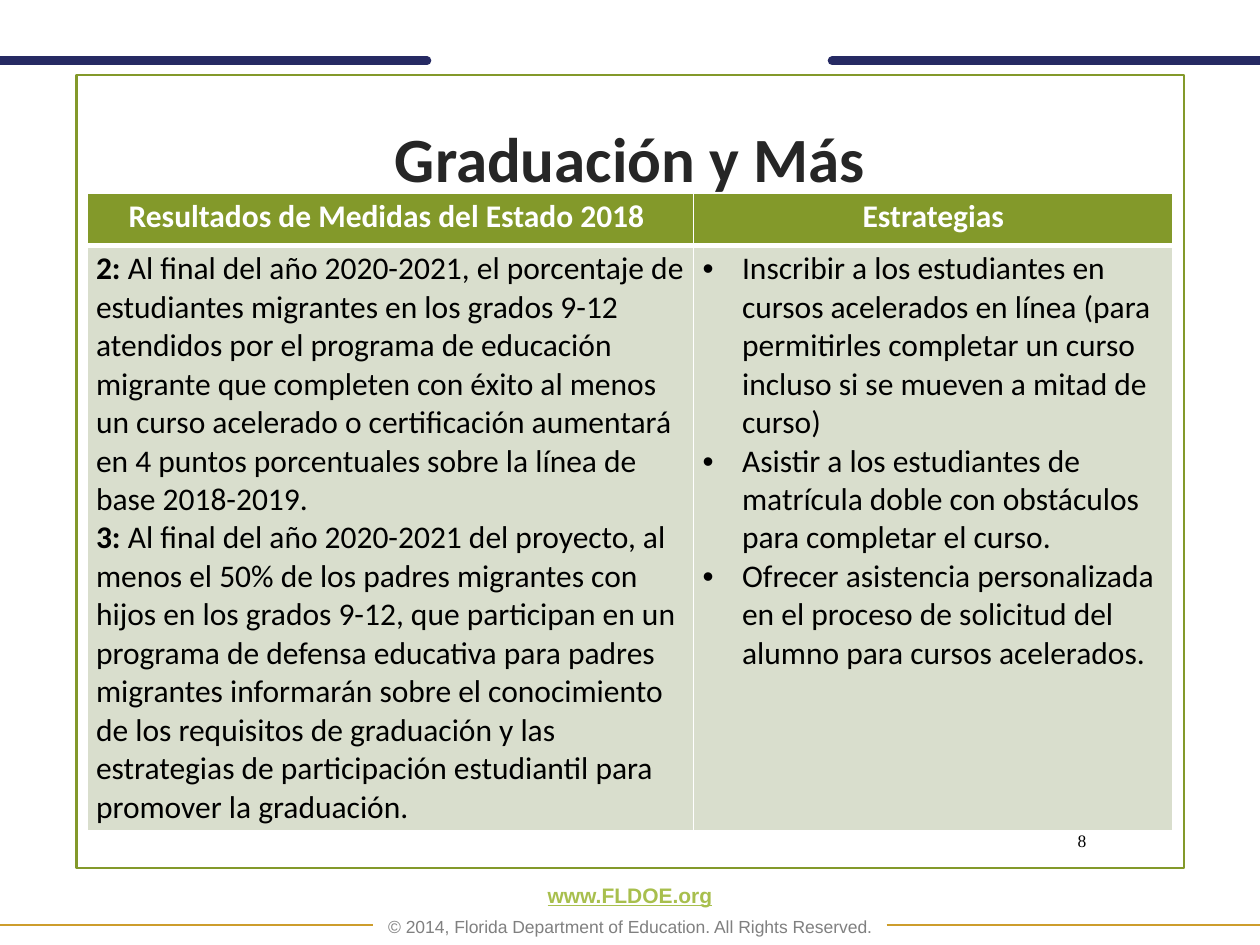
from dataclasses import dataclass

from lxml.etree import SubElement as Sub
from pptx import Presentation
from pptx.dml.color import RGBColor as Rgb
from pptx.enum.shapes import MSO_CONNECTOR as Conn, MSO_SHAPE as Shape
from pptx.enum.text import MSO_ANCHOR as Anchor, PP_ALIGN as Align
from pptx.oxml.ns import qn
from pptx.util import Pt

HUE = {
    "green": "83992A", "lime": "A8BF4D", "pale": "D9DECD", "navy": "262A63",
    "gold": "CD9D2C", "gray": "808080", "dark": "262626",
    "black": "000000", "white": "FFFFFF",
}


@dataclass
class Rule:
    left: float
    right: float
    top: float
    hue: str
    width: float
    cap: str


RULES = [
    Rule(0, 244, 34.7, "navy", 5, "rnd"),
    Rule(475.5, 720, 34.7, "navy", 5, "rnd"),
    Rule(0, 213.3, 528.5, "gold", 1, "flat"),
    Rule(506.7, 720, 528.5, "gold", 1, "flat"),
]

HEADS = ["Resultados de Medidas del Estado 2018 ", "Estrategias"]
GOALS = [
    ("2: ", "Al final del año 2020-2021, el porcentaje de estudiantes migrantes "
     "en los grados 9-12 atendidos por el programa de educación migrante que "
     "completen con éxito al menos un curso acelerado o certificación aumentará "
     "en 4 puntos porcentuales sobre la línea de base 2018-2019."),
    ("3: ", "Al final del año 2020-2021 del proyecto, al menos el 50% de los "
     "padres migrantes con hijos en los grados 9-12, que participan en un "
     "programa de defensa educativa para padres migrantes informarán sobre el "
     "conocimiento de los requisitos de graduación y las estrategias de "
     "participación estudiantil para promover la graduación."),
]
STEPS = [
    "Inscribir a los estudiantes en cursos acelerados en línea (para permitirles "
    "completar un curso incluso si se mueven a mitad de curso)",
    "Asistir a los estudiantes de matrícula doble con obstáculos para completar "
    "el curso.",
    "Ofrecer asistencia personalizada en el proceso de solicitud del alumno para "
    "cursos acelerados.",
]


def color(name: str) -> Rgb:
    return Rgb.from_string(HUE[name])


def write(frame, text: str, *, lead="", new=False, font="Calibri", size=18,
          hue="black", bold=False, line=False, align=Align.LEFT, bullet=False,
          space=None, before=0):
    """Put one paragraph in a frame, with an optional bold lead."""
    par = frame.add_paragraph() if new else frame.paragraphs[0]
    par.alignment = align
    if space:
        par.line_spacing = space
    if before:
        par.space_before = Pt(before)
    if bullet:
        props = par._p.get_or_add_pPr()
        props.set("marL", str(Pt(22.5)))
        props.set("indent", str(-Pt(22.5)))
        Sub(props, qn("a:buFont"), typeface="Arial")
        Sub(props, qn("a:buChar"), char="•")
    for part, heavy in ((lead, True), (text, bold)):
        if not part:
            continue
        run = par.add_run()
        run.text = part
        run.font.name, run.font.size = font, Pt(size)
        run.font.bold, run.font.underline = heavy, line
        run.font.color.rgb = color(hue)


def add_box(slide, left: float, top: float, wide: float, high: float, anchor):
    frame = slide.shapes.add_textbox(Pt(left), Pt(top), Pt(wide), Pt(high)).text_frame
    frame.word_wrap = True
    frame.vertical_anchor = anchor
    return frame


def add_rule(slide, rule: Rule):
    link = slide.shapes.add_connector(
        Conn.STRAIGHT, Pt(rule.left), Pt(rule.top), Pt(rule.right), Pt(rule.top))
    link.line.color.rgb = color(rule.hue)
    link.line.width = Pt(rule.width)
    link.line._get_or_add_ln().set("cap", rule.cap)
    Sub(link._element.spPr, qn("a:effectLst"))


def style_cell(cell, fill: str, base: float):
    """Set fill, margins and white borders, with its own bottom width."""
    props = cell._tc.get_or_add_tcPr()
    for side, width in (("L", 1), ("R", 1), ("T", 1), ("B", base)):
        edge = Sub(props, qn(f"a:ln{side}"), w=str(Pt(width)))
        Sub(Sub(edge, qn("a:solidFill")), qn("a:srgbClr"), val=HUE["white"])
    cell.fill.solid()
    cell.fill.fore_color.rgb = color(fill)
    cell.margin_left = cell.margin_right = Pt(5.2)
    cell.margin_top = cell.margin_bottom = Pt(2.6)


def add_grid(slide):
    grid = slide.shapes.add_table(2, 2, Pt(49.7), Pt(110.2), Pt(620.6), Pt(360)).table
    for col, wide in zip(grid.columns, (346.7, 273.9)):
        col.width = Pt(wide)
    for row, high in zip(grid.rows, (30, 328.3)):
        row.height = Pt(high)
    for col, head in enumerate(HEADS):
        style_cell(grid.cell(0, col), "green", 3)
        style_cell(grid.cell(1, col), "pale", 1)
        write(grid.cell(0, col).text_frame, head, hue="white", bold=True,
              align=Align.CENTER)
    for i, (lead, goal) in enumerate(GOALS):
        write(grid.cell(1, 0).text_frame, goal, lead=lead, new=i > 0)
    for i, step in enumerate(STEPS):
        write(grid.cell(1, 1).text_frame, step, new=i > 0, bullet=True)


def main():
    deck = Presentation()
    deck.slide_width, deck.slide_height = Pt(720), Pt(540)
    slide = deck.slides.add_slide(deck.slide_layouts[5])

    # Frame and rules
    frame = slide.shapes.add_shape(
        Shape.RECTANGLE, Pt(43.7), Pt(42.8), Pt(633), Pt(453.2))
    frame.shadow.inherit = False
    frame.fill.background()
    frame.line.color.rgb = color("green")
    frame.line.width = Pt(1.25)
    for rule in RULES:
        add_rule(slide, rule)

    # Title
    title = slide.shapes.title
    title.left, title.top = Pt(49.7), Pt(69.1)
    title.width, title.height = Pt(620.6), Pt(41)
    title.text_frame.vertical_anchor = Anchor.MIDDLE
    write(title.text_frame, "Graduación y Más", size=36, hue="dark", bold=True,
          align=Align.CENTER)

    # Table
    add_grid(slide)

    # Footer and page number
    foot = add_box(slide, 49.7, 508.3, 620.6, 31, Anchor.BOTTOM)
    write(foot, "www.FLDOE.org", font="Arial", size=12, hue="lime", bold=True,
          line=True, align=Align.CENTER, space=0.9)
    write(foot, "© 2014, Florida Department of Education. All Rights Reserved.",
          new=True, font="Arial", size=10, hue="gray", align=Align.CENTER,
          space=0.9, before=6)
    page = add_box(slide, 596.9, 469.4, 31, 22.3, Anchor.MIDDLE)
    write(page, "8", font="Times New Roman", size=10, align=Align.RIGHT)

    deck.save("out.pptx")


if __name__ == "__main__":
    main()
